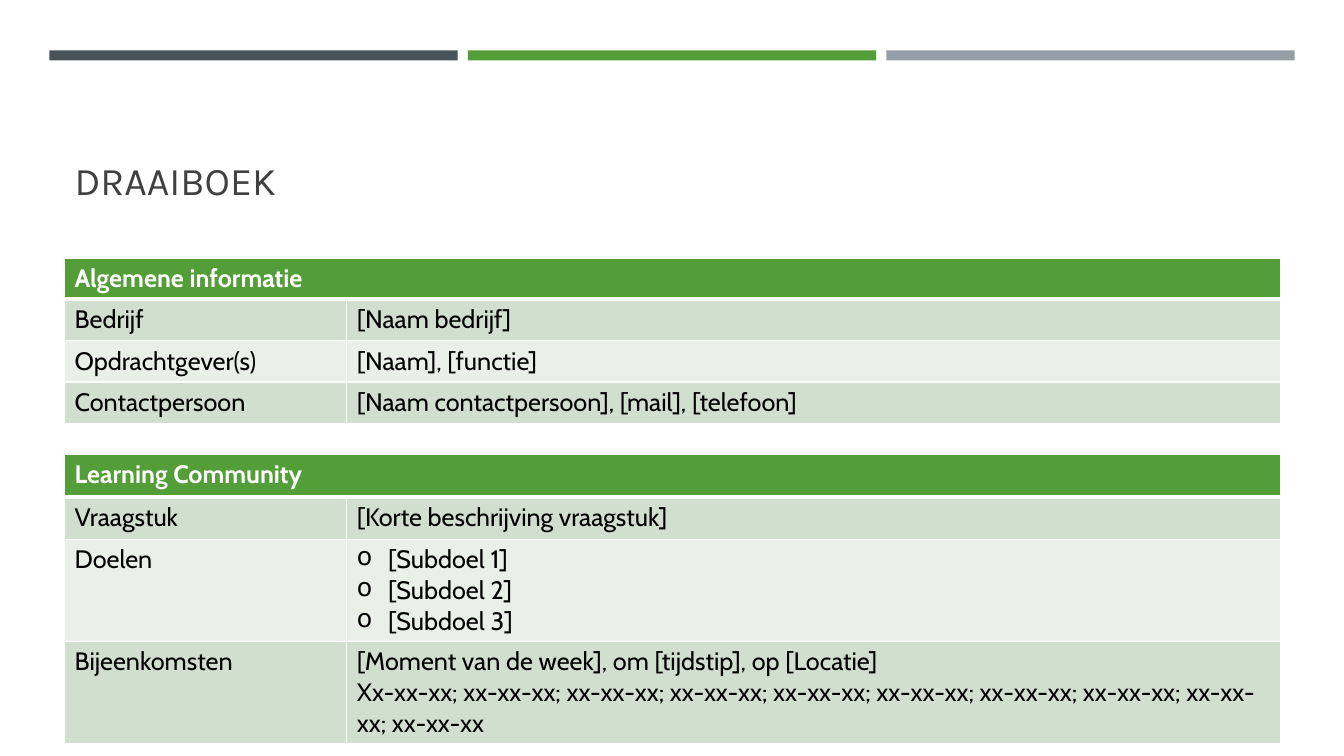
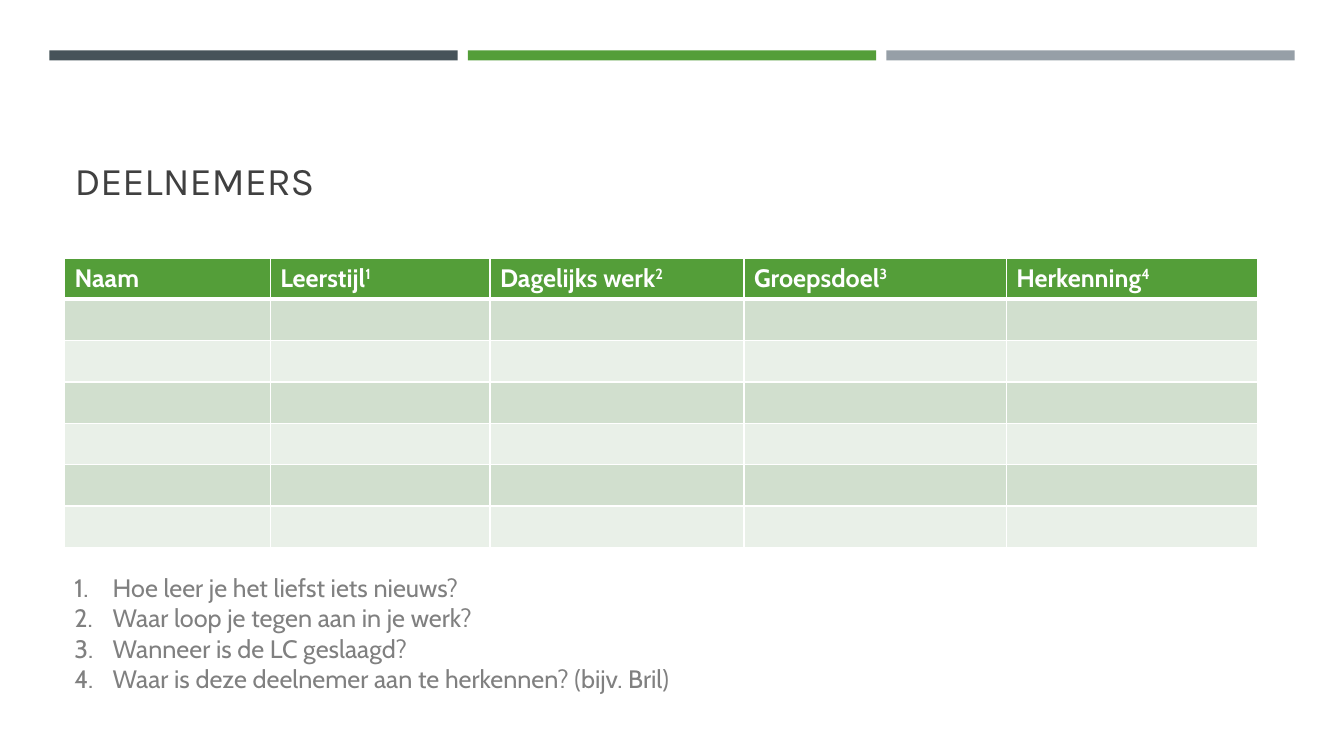
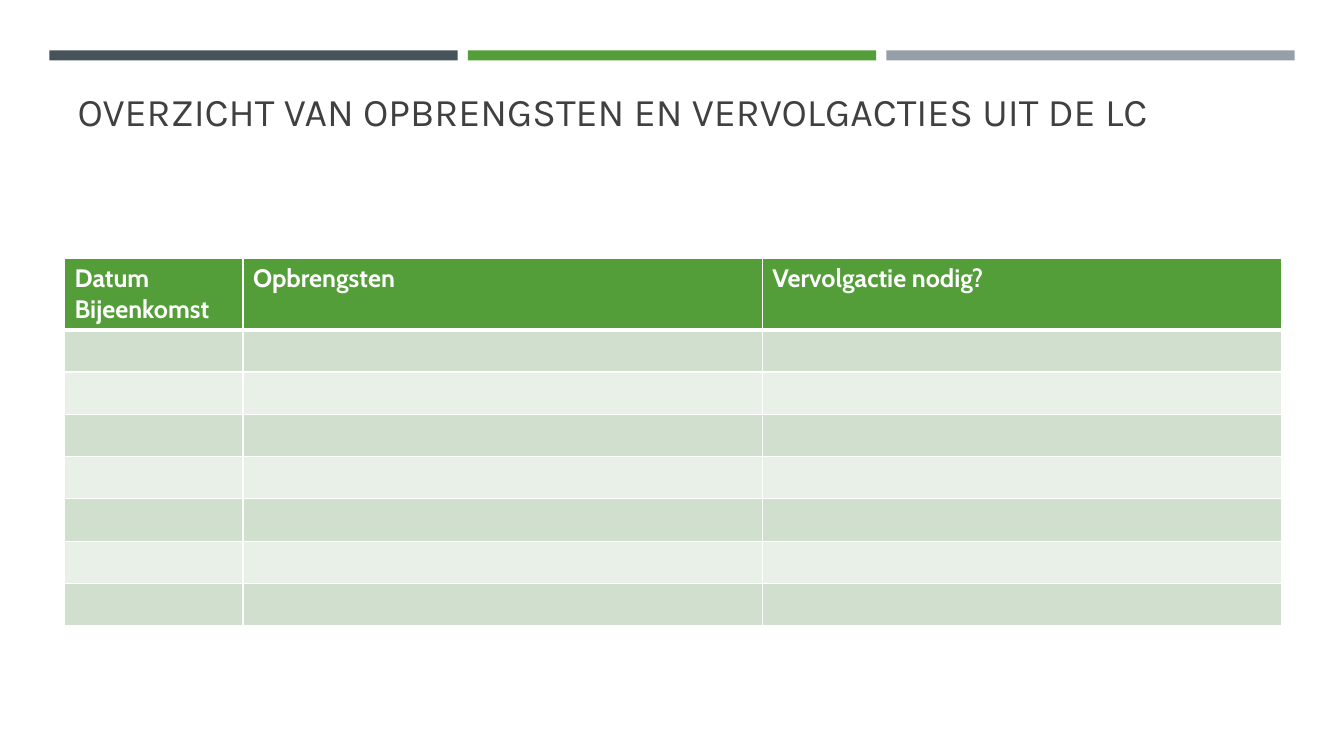
from dataclasses import dataclass
from lxml.etree import SubElement
from pptx import Presentation
from pptx.dml.color import RGBColor as RGB
from pptx.enum.shapes import MSO_SHAPE as SHAPE
from pptx.enum.text import MSO_ANCHOR as ANCHOR, MSO_AUTO_SIZE as AUTO, PP_ALIGN as ALIGN
from pptx.oxml.ns import qn
from pptx.util import Inches, Pt


@dataclass
class Theme:
    slate: str = "465359"
    green: str = "549E39"
    grey: str = "969FA7"
    title: str = "404040"
    note: str = "808080"
    white: str = "FFFFFF"
    black: str = "000000"
    rows: tuple = ("D1DFCE", "E9F0E8")
    title_font: str = "Karla"
    body_font: str = "Cabin"
    title_size: int = 28
    body_size: int = 18


th = Theme()
LEFT, WIDTH, TABLE_TOP = 0.64, 12.06, 2.56


def write(tf, lines, color, bold=False, bullet=None, indent=0, font=th.body_font, size=th.body_size):
    """Write one paragraph per line; text after ^ is superscript."""
    for i, line in enumerate(lines):
        p = tf.paragraphs[0] if i == 0 else tf.add_paragraph()
        p.alignment = ALIGN.LEFT
        base, mark, raised = line.partition("^")
        for text in filter(None, (base, raised)):
            r = p.add_run()
            r.text = text
            r.font.name, r.font.size, r.font.bold = font, Pt(size), bold
            r.font.color.rgb = RGB.from_string(color)
        if mark:
            r._r.get_or_add_rPr().set("baseline", "30000")
        if bullet:
            pPr = p._p.get_or_add_pPr()
            pPr.set("marL", str(Inches(indent)))
            pPr.set("indent", str(-Inches(indent)))
            tag, key, value = bullet
            SubElement(pPr, qn(tag)).set(key, value)


def add_grid(s, top, cols, row_height, rows):
    """Add a table with a green header and banded rows; a lone header spans all columns."""
    shape = s.shapes.add_table(len(rows), len(cols), Inches(LEFT), Inches(top),
                               Inches(sum(cols)), Inches(row_height * len(rows)))
    table = shape.table
    for col, width in zip(table.columns, cols):
        col.width = Inches(width)
    for i, row in enumerate(rows):
        table.rows[i].height = Inches(row_height)
        for j in range(len(cols)):
            cell = table.cell(i, j)
            cell.fill.solid()
            cell.fill.fore_color.rgb = RGB.from_string(th.rows[(i - 1) % 2] if i else th.green)
            # White borders, thicker below the header
            tcPr = cell._tc.get_or_add_tcPr()
            thick = {0: "a:lnB", 1: "a:lnT"}.get(i)
            for n, side in enumerate(("a:lnL", "a:lnR", "a:lnT", "a:lnB")):
                ln = SubElement(tcPr, qn(side))
                ln.set("w", str(Pt(3 if side == thick else 1)))
                fill = SubElement(ln, qn("a:solidFill"))
                SubElement(fill, qn("a:srgbClr")).set("val", th.white)
                tcPr.insert(n, ln)
            # A list in a cell becomes bullets, a line break a new paragraph
            text = row[j] if j < len(row) else ""
            if isinstance(text, list):
                write(cell.text_frame, text, th.black, bullet=("a:buChar", "char", "o"), indent=0.31)
            elif text:
                write(cell.text_frame, text.split("\n"), th.black if i else th.white, bold=i == 0)
    if len(rows[0]) == 1:
        table.cell(0, 0).merge(table.cell(0, len(cols) - 1))


prs = Presentation()
prs.slide_width, prs.slide_height = Inches(13.33), Inches(7.5)

# Titles and top bands
titles = [
    ("DRAAIBOEK", 0.64, 0.77, 1.3),
    ("DEELNEMERS", 0.64, 0.77, 1.3),
    ("OVERZICHT VAN OPBRENGSTEN EN VERVOLGACTIES UIT DE LC", 0.67, 0.45, 0.93),
]
slides = []
for title, left, top, height in titles:
    s = prs.slides.add_slide(prs.slide_layouts[5])
    slides.append(s)
    for i, color in enumerate((th.slate, th.green, th.grey)):
        band = s.shapes.add_shape(SHAPE.RECTANGLE, Inches(0.49 + i * 4.15), Inches(0.5),
                                  Inches(4.05), Inches(0.1))
        band.shadow.inherit = False
        band.fill.solid()
        band.fill.fore_color.rgb = RGB.from_string(color)
        band.line.fill.background()
    sp = s.shapes.title
    sp.left, sp.top, sp.width, sp.height = (Inches(v) for v in (left, top, WIDTH, height))
    tf = sp.text_frame
    tf.word_wrap, tf.auto_size, tf.vertical_anchor = True, AUTO.NONE, ANCHOR.BOTTOM
    write(tf, [title], th.title, font=th.title_font, size=th.title_size)
plan, members, results = slides

# Plan: general information and learning community
add_grid(plan, TABLE_TOP, (2.8, 9.26), 0.41, [
    ("Algemene informatie",),
    ("Bedrijf", "[Naam bedrijf]"),
    ("Opdrachtgever(s)", "[Naam], [functie]"),
    ("Contactpersoon", "[Naam contactpersoon], [mail], [telefoon]"),
])
dates = "; ".join(["Xx-xx-xx"] + ["xx-xx-xx"] * 9)
add_grid(plan, 4.51, (2.8, 9.26), 0.42, [
    ("Learning Community",),
    ("Vraagstuk", "[Korte beschrijving vraagstuk]"),
    ("Doelen", [f"[Subdoel {n}]" for n in (1, 2, 3)]),
    ("Bijeenkomsten", "[Moment van de week], om [tijdstip], op [Locatie]\n" + dates),
])

# Members: empty table with numbered questions
add_grid(members, TABLE_TOP, (2.04, 2.18, 2.52, 2.6, 2.49), 0.41, [
    ("Naam", "Leerstijl^1", "Dagelijks werk^2", "Groepsdoel^3", "Herkenning^4"),
] + [()] * 6)
notes = members.shapes.add_textbox(Inches(LEFT), Inches(5.63), Inches(WIDTH), Inches(1.31))
notes.text_frame.word_wrap = True
write(notes.text_frame, [
    "Hoe leer je het liefst iets nieuws?",
    "Waar loop je tegen aan in je werk?",
    "Wanneer is de LC geslaagd?",
    "Waar is deze deelnemer aan te herkennen? (bijv. Bril)",
], th.note, bullet=("a:buAutoNum", "type", "arabicPeriod"), indent=0.38)

# Results and follow-up actions
add_grid(results, TABLE_TOP, (1.77, 5.15, 5.15), 0.42, [
    ("Datum Bijeenkomst", "Opbrengsten", "Vervolgactie nodig?"),
] + [()] * 7)

prs.save("out.pptx")
